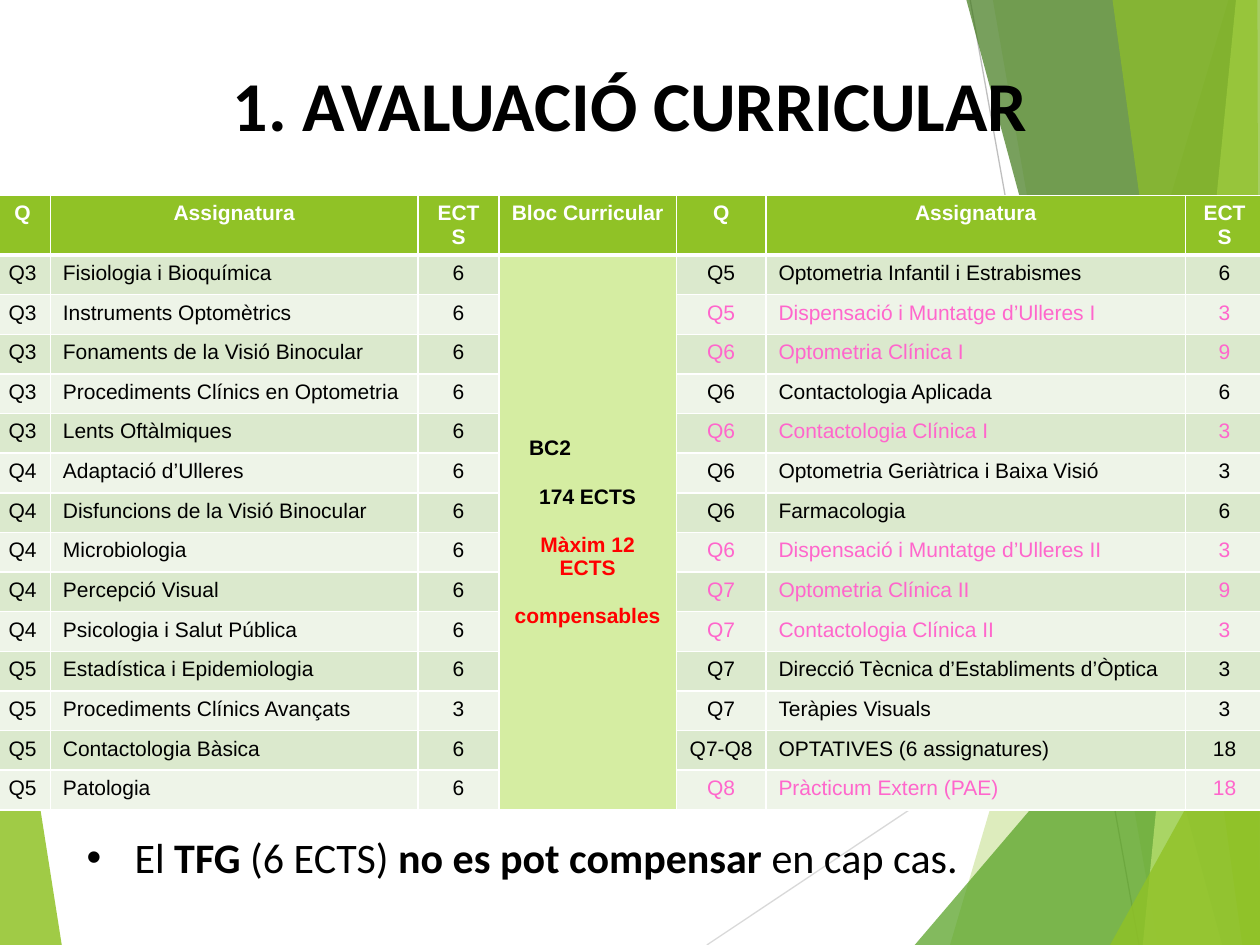
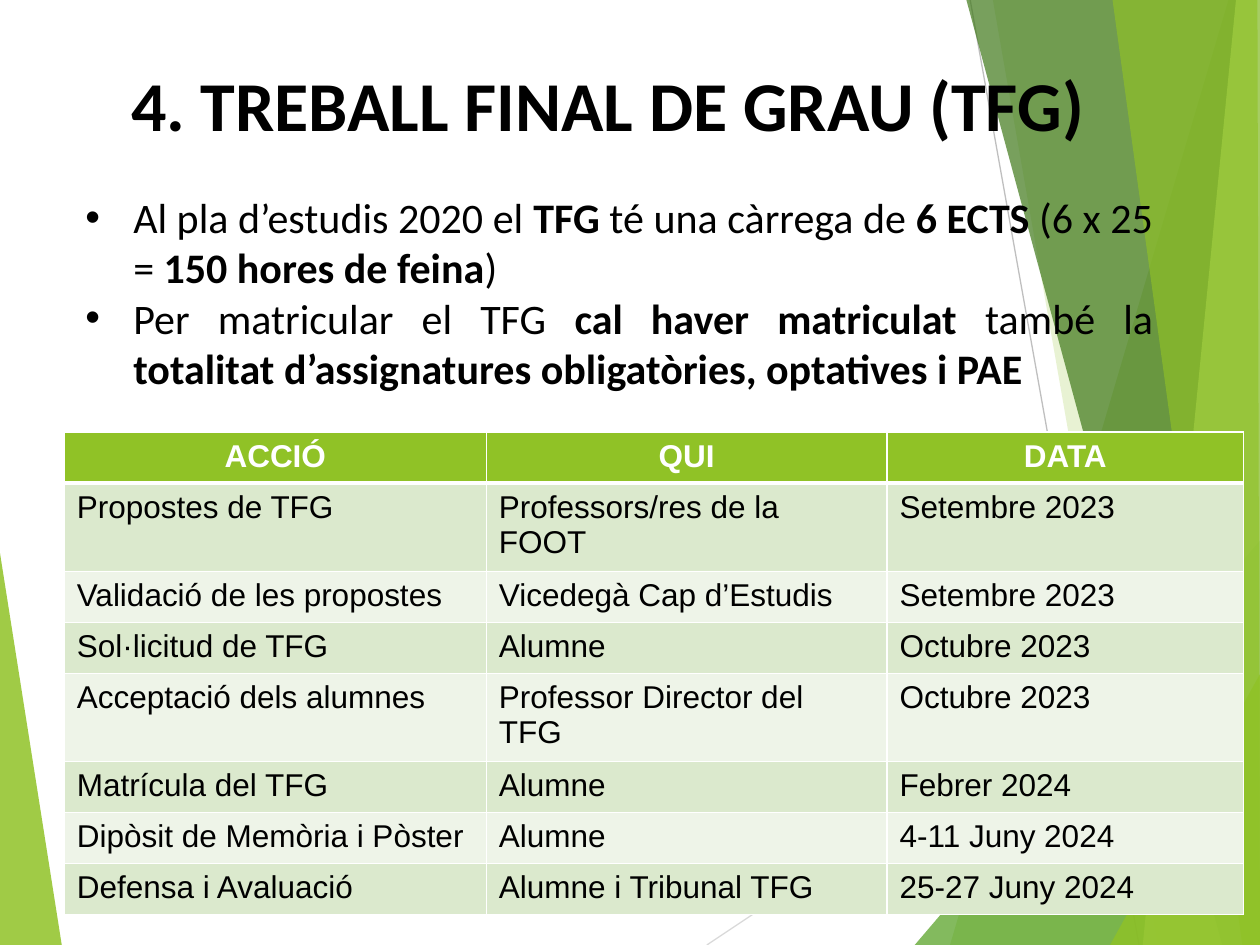
import dataclasses

import lxml.etree
import pptx
import pptx.dml.color
import pptx.enum.shapes
import pptx.enum.text
import pptx.oxml.ns
import pptx.util

Inches = pptx.util.Inches
Pt = pptx.util.Pt
qn = pptx.oxml.ns.qn
ALIGN = pptx.enum.text.PP_ALIGN


@dataclasses.dataclass(frozen=True)
class Theme:
    text: str = "000000"
    white: str = "FFFFFF"
    lime: str = "90C226"
    leaf: str = "54A021"
    forest: str = "3F7819"
    pale_lime: str = "C0E474"
    block: str = "D5EDA2"
    bands: tuple = ("DBE9CD", "EEF4E8")
    warning: str = "FF0000"
    practical: str = "FF66CC"
    light_line: str = "D9D9D9"
    dark_line: str = "BFBFBF"
    heading_font: str = "Calibri"
    table_font: str = "Arial"
    title_size: int = 40
    bullet_size: int = 24
    schedule_size: int = 18
    subject_size: int = 12


THEME = Theme()

# Outline points, colour, opacity in percent
FACETS = [
    ([(0, 4.39), (0.49, 7.5), (0, 7.5)], THEME.lime, 85),
    ([(9.75, 0), (7.54, 7.5), (10, 7.5), (10, 0)], THEME.lime, 30),
    ([(7.88, 0), (9.19, 7.5), (10, 7.5), (10, 0)], THEME.lime, 20),
    ([(7.26, 7.5), (10, 4.29), (10, 7.5)], THEME.leaf, 72),
    ([(7.67, 0), (9.7, 7.5), (10, 7.5), (10, 0)], THEME.forest, 70),
    ([(9.81, 0), (9.07, 7.5), (10, 7.5), (10, 0)], THEME.pale_lime, 70),
    ([(8.83, 0), (9.86, 7.5), (10, 7.5), (9.98, 0)], THEME.lime, 65),
    ([(8.81, 7.5), (10, 5.35), (10, 7.5)], THEME.lime, 80),
]
RAYS = [
    ((5.61, 7.5), (10, 4.57), THEME.light_line),
    ((7.7, 0), (9.04, 7.5), THEME.dark_line),
]

SUBJECT_HEADER = ["Q", "Assignatura", "ECTS"]
FIRST_SUBJECTS = [
    ("Q3", "Fisiologia i Bioquímica", "6"),
    ("Q3", "Instruments Optomètrics", "6"),
    ("Q3", "Fonaments de la Visió Binocular", "6"),
    ("Q3", "Procediments Clínics en Optometria", "6"),
    ("Q3", "Lents Oftàlmiques", "6"),
    ("Q4", "Adaptació d’Ulleres", "6"),
    ("Q4", "Disfuncions de la Visió Binocular", "6"),
    ("Q4", "Microbiologia", "6"),
    ("Q4", "Percepció Visual", "6"),
    ("Q4", "Psicologia i Salut Pública", "6"),
    ("Q5", "Estadística i Epidemiologia", "6"),
    ("Q5", "Procediments Clínics Avançats", "3"),
    ("Q5", "Contactologia Bàsica", "6"),
    ("Q5", "Patologia", "6"),
]
LAST_SUBJECTS = [
    ("Q5", "Optometria Infantil i Estrabismes", "6"),
    ("Q5", "Dispensació i Muntatge d’Ulleres I", "3"),
    ("Q6", "Optometria Clínica I", "9"),
    ("Q6", "Contactologia Aplicada", "6"),
    ("Q6", "Contactologia Clínica I", "3"),
    ("Q6", "Optometria Geriàtrica i Baixa Visió", "3"),
    ("Q6", "Farmacologia", "6"),
    ("Q6", "Dispensació i Muntatge d’Ulleres II", "3"),
    ("Q7", "Optometria Clínica II", "9"),
    ("Q7", "Contactologia Clínica II", "3"),
    ("Q7", "Direcció Tècnica d’Establiments d’Òptica", "3"),
    ("Q7", "Teràpies Visuals", "3"),
    ("Q7-Q8", "OPTATIVES (6 assignatures)", "18"),
    ("Q8", "Pràcticum Extern (PAE)", "18"),
]
PRACTICAL_SUBJECTS = ("Dispensació", "Optometria Clínica", "Contactologia Clínica", "Pràcticum")
BLOCK_COLUMN = 3
BLOCK_LINES = [
    ("BC2", THEME.text),
    ("174 ECTS", THEME.text),
    ("Màxim 12 ECTS", THEME.warning),
    ("compensables", THEME.warning),
]
SCHEDULE = [
    ("ACCIÓ", "QUI", "DATA"),
    ("Propostes de TFG", "Professors/res de la FOOT", "Setembre 2023"),
    ("Validació de les propostes", "Vicedegà Cap d’Estudis", "Setembre 2023"),
    ("Sol·licitud de TFG", "Alumne", "Octubre 2023"),
    ("Acceptació dels alumnes", "Professor Director del TFG", "Octubre 2023"),
    ("Matrícula del TFG", "Alumne", "Febrer 2024"),
    ("Dipòsit de Memòria i Pòster", "Alumne", "4-11 Juny 2024"),
    ("Defensa i Avaluació", "Alumne i Tribunal TFG", "25-27 Juny 2024"),
]


def rgb(color):
    return pptx.dml.color.RGBColor.from_string(color)


def set_font(paragraph, name, size, color, bold=None):
    font = paragraph.font
    font.name, font.size, font.bold = name, Pt(size), bold
    font.color.rgb = rgb(color)


def add_facet(slide, points, color, opacity):
    corners = [(Inches(x), Inches(y)) for x, y in points]
    builder = slide.shapes.build_freeform(*corners[0])
    builder.add_line_segments(corners[1:], close=True)
    shape = builder.convert_to_shape()
    shape.shadow.inherit = False
    shape.line.fill.background()
    shape.fill.solid()
    shape.fill.fore_color.rgb = rgb(color)
    color_element = shape.element.find(".//" + qn("a:srgbClr"))
    lxml.etree.SubElement(color_element, qn("a:alpha"), val=str(opacity * 1000))
    return shape


def add_ray(slide, start, end, color):
    connector = slide.shapes.add_connector(
        pptx.enum.shapes.MSO_CONNECTOR.STRAIGHT, *map(Inches, start + end)
    )
    connector.line.color.rgb = rgb(color)
    connector.line.width = Pt(0.75)
    lxml.etree.SubElement(connector.element.spPr, qn("a:effectLst"))
    return connector


def decorate_layout(layout, slide):
    """Draw the green facets on the slide, then move them to its layout."""
    for placeholder in list(layout.placeholders):
        if placeholder.placeholder_format.idx > 0:
            layout.shapes.element.remove(placeholder.element)
    decorations = [add_ray(slide, *ray) for ray in RAYS]
    decorations += [add_facet(slide, *facet) for facet in FACETS]
    for decoration in decorations:
        layout.shapes.element.append(decoration.element)


def set_title(slide, text, left, width, alignment):
    title = slide.shapes.title
    title.left, title.top = Inches(left), Inches(0.44)
    title.width, title.height = Inches(width), Inches(0.77)
    frame = title.text_frame
    frame.text = text
    frame.auto_size = pptx.enum.text.MSO_AUTO_SIZE.NONE
    frame.vertical_anchor = pptx.enum.text.MSO_ANCHOR.TOP
    paragraph = frame.paragraphs[0]
    paragraph.alignment = alignment
    set_font(paragraph, THEME.heading_font, THEME.title_size, THEME.text, True)


def add_bullets(slide, items, left, top, width, height, alignment):
    """Add a bulleted text box; ** around words makes them bold."""
    box = slide.shapes.add_textbox(Inches(left), Inches(top), Inches(width), Inches(height))
    frame = box.text_frame
    frame.word_wrap = True
    for index, item in enumerate(items):
        paragraph = frame.add_paragraph() if index else frame.paragraphs[0]
        properties = paragraph._p.get_or_add_pPr()
        properties.set("marL", str(Inches(0.38)))
        properties.set("indent", str(Inches(-0.38)))
        lxml.etree.SubElement(properties, qn("a:buFont"), typeface="Arial")
        lxml.etree.SubElement(properties, qn("a:buChar"), char="•")
        paragraph.alignment = alignment
        set_font(paragraph, THEME.heading_font, THEME.bullet_size, THEME.text)
        for part_index, part in enumerate(item.split("**")):
            if part:
                run = paragraph.add_run()
                run.text = part
                if part_index % 2:
                    run.font.bold = True


def add_grid(slide, left, top, height, column_widths, row_count):
    """Add a table with white borders, a green header and banded rows."""
    frame = slide.shapes.add_table(
        row_count, len(column_widths), Inches(left), Inches(top),
        Inches(sum(column_widths)), Inches(height),
    )
    table = frame.table
    for column, width in zip(table.columns, column_widths):
        column.width = Inches(width)
    for row_index, row in enumerate(table.rows):
        fill = THEME.bands[(row_index - 1) % 2] if row_index else THEME.lime
        for cell in row.cells:
            add_borders(cell, below_header=row_index == 1, is_header=row_index == 0)
            fill_cell(cell, fill)
    return table


def add_borders(cell, below_header, is_header):
    properties = cell._tc.get_or_add_tcPr()
    for side in ("lnL", "lnR", "lnT", "lnB"):
        thick = (is_header and side == "lnB") or (below_header and side == "lnT")
        line = lxml.etree.SubElement(properties, qn("a:" + side), w=str(Pt(3 if thick else 1)))
        solid = lxml.etree.SubElement(line, qn("a:solidFill"))
        lxml.etree.SubElement(solid, qn("a:srgbClr"), val=THEME.white)


def fill_cell(cell, color):
    cell.fill.solid()
    cell.fill.fore_color.rgb = rgb(color)


def write_cell(cell, text, size, color=THEME.text, bold=False, alignment=ALIGN.LEFT):
    cell.text = text
    paragraph = cell.text_frame.paragraphs[0]
    paragraph.alignment = alignment
    set_font(paragraph, THEME.table_font, size, color, bold)


def write_header(table, labels, size):
    for column, label in enumerate(labels):
        write_cell(table.cell(0, column), label, size, THEME.white, True, ALIGN.CENTER)


def write_subjects(table, subjects, first_column):
    for row, subject in enumerate(subjects, start=1):
        practical = subject[1].startswith(PRACTICAL_SUBJECTS)
        color = THEME.practical if practical else THEME.text
        for offset, text in enumerate(subject):
            alignment = ALIGN.LEFT if offset == 1 else ALIGN.CENTER
            cell = table.cell(row, first_column + offset)
            write_cell(cell, text, THEME.subject_size, color, alignment=alignment)


def write_block(table):
    cell = table.cell(1, BLOCK_COLUMN)
    cell.merge(table.cell(len(FIRST_SUBJECTS), BLOCK_COLUMN))
    fill_cell(cell, THEME.block)
    cell.vertical_anchor = pptx.enum.text.MSO_ANCHOR.MIDDLE
    frame = cell.text_frame
    for index, (text, color) in enumerate(BLOCK_LINES):
        paragraph = frame.add_paragraph() if index else frame.paragraphs[0]
        paragraph.text = text
        if index:
            paragraph.alignment = ALIGN.CENTER
            paragraph.space_before = Pt(14)
        else:
            paragraph.alignment = ALIGN.LEFT
            paragraph._p.get_or_add_pPr().set("marL", str(Inches(0.14)))
        set_font(paragraph, THEME.table_font, THEME.subject_size, color, True)


def build_curriculum(slide):
    set_title(slide, "1. AVALUACIÓ CURRICULAR", 0.35, 9.3, ALIGN.CENTER)
    widths = [0.44, 2.92, 0.64, 1.41, 0.71, 3.33, 0.62]
    table = add_grid(slide, -0.04, 1.55, 4.72, widths, len(FIRST_SUBJECTS) + 1)
    labels = SUBJECT_HEADER + ["Bloc Curricular"] + SUBJECT_HEADER
    write_header(table, labels, THEME.subject_size)
    write_subjects(table, FIRST_SUBJECTS, 0)
    write_subjects(table, LAST_SUBJECTS, BLOCK_COLUMN + 1)
    write_block(table)
    note = "El **TFG** (6 ECTS) **no es pot compensar** en cap cas."
    add_bullets(slide, [note], 0.59, 6.55, 9.06, 0.5, ALIGN.LEFT)


def build_final_project(slide):
    set_title(slide, "4. TREBALL FINAL DE GRAU (TFG)", 0.94, 8.08, ALIGN.LEFT)
    requirements = [
        "Al pla d’estudis 2020 el **TFG** té una càrrega de **6 ECTS** "
        "(6 x 25 = **150 hores de feina**)",
        "Per matricular el TFG **cal haver matriculat** també la "
        "**totalitat d’assignatures obligatòries, optatives i PAE**",
    ]
    add_bullets(slide, requirements, 0.58, 1.47, 8.67, 1.72, ALIGN.JUSTIFY)
    table = add_grid(slide, 0.51, 3.43, 3.24, [3.35, 3.18, 2.83], len(SCHEDULE))
    write_header(table, SCHEDULE[0], THEME.schedule_size)
    for row, step in enumerate(SCHEDULE[1:], start=1):
        for column, text in enumerate(step):
            write_cell(table.cell(row, column), text, THEME.schedule_size)


def main():
    presentation = pptx.Presentation()
    presentation.slide_width, presentation.slide_height = Inches(10), Inches(7.5)
    layout = presentation.slide_layouts.get_by_name("Title Only")
    curriculum = presentation.slides.add_slide(layout)
    decorate_layout(layout, curriculum)
    build_curriculum(curriculum)
    build_final_project(presentation.slides.add_slide(layout))
    presentation.save("out.pptx")


if __name__ == "__main__":
    main()
